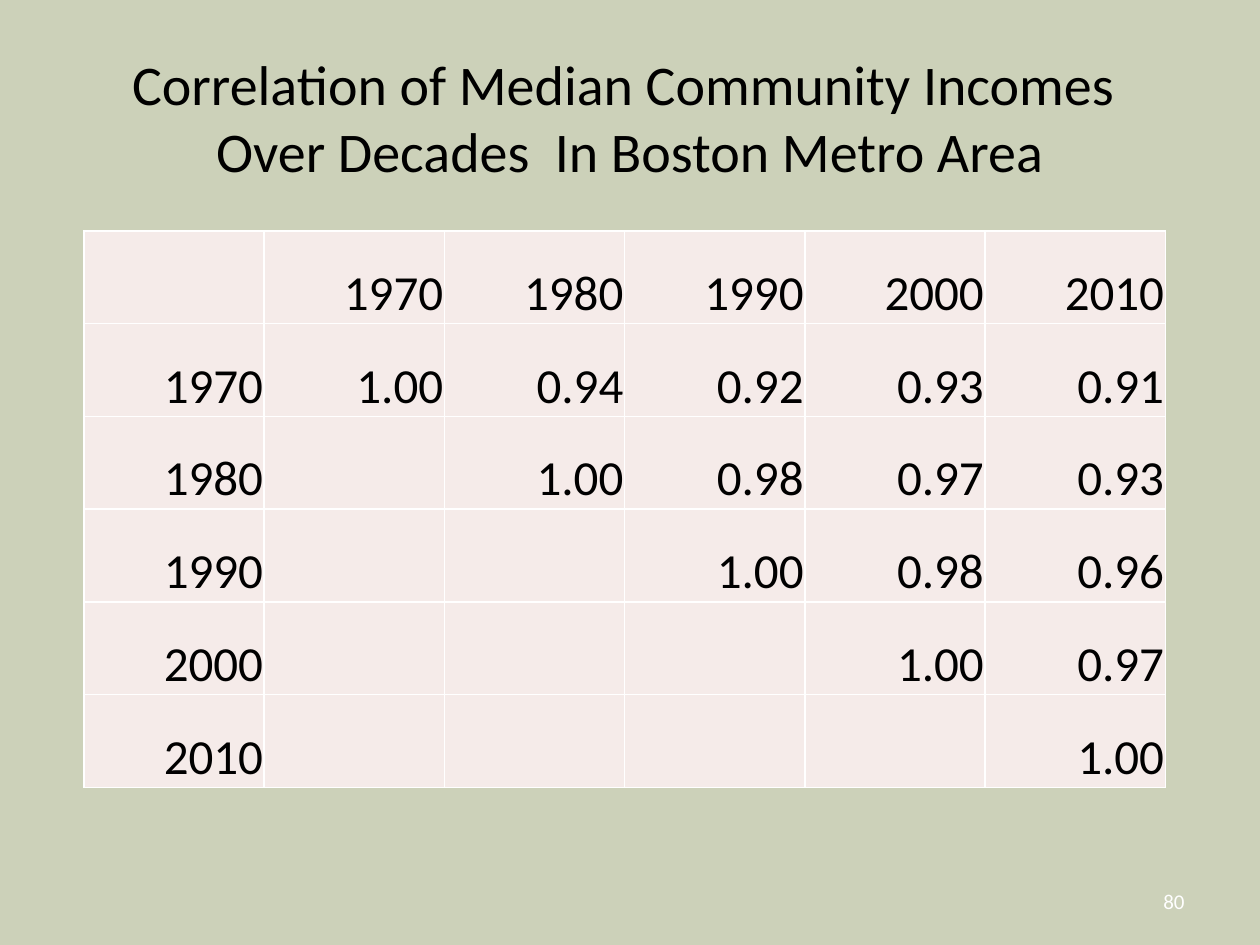
import pptx
import pptx.util
import pptx.dml.color
import pptx.enum.text
import pptx.oxml.ns
from lxml import etree

Pt = pptx.util.Pt
ALIGN = pptx.enum.text.PP_ALIGN
ANCHOR = pptx.enum.text.MSO_ANCHOR

# Content
TITLE = "Correlation of Median Community Incomes \nOver Decades  In Boston Metro Area"
PAGE_NUMBER = "80"
DECADES = ["1970", "1980", "1990", "2000", "2010"]
# Upper triangle: each row starts on the diagonal
CORRELATIONS = [
    ["1.00", "0.94", "0.92", "0.93", "0.91"],
    ["1.00", "0.98", "0.97", "0.93"],
    ["1.00", "0.98", "0.96"],
    ["1.00", "0.97"],
    ["1.00"],
]

# Style and layout
COLORS = {"background": "CCD1B9", "cell": "F5EBE9", "border": "FFFFFF",
          "text": "000000", "page": "FFFFFF"}
FONT = "Calibri"
TABLE_LEFT, TABLE_TOP = 48, 132
COLUMN_WIDTH, ROW_HEIGHT = 103, 53
CELL_INSET = 0.75


def rgb(name):
    return pptx.dml.color.RGBColor.from_string(COLORS[name])


def format_text(frame, size, color, align, anchor):
    frame.vertical_anchor = anchor
    for paragraph in frame.paragraphs:
        paragraph.alignment = align
        for run in paragraph.runs:
            run.font.name = FONT
            run.font.size = Pt(size)
            run.font.bold = False
            run.font.color.rgb = rgb(color)


def add_borders(cell):
    qn = pptx.oxml.ns.qn
    properties = cell._tc.get_or_add_tcPr()
    for side in ("lnL", "lnR", "lnT", "lnB"):
        line = etree.SubElement(properties, qn("a:" + side), w=str(Pt(1)))
        fill = etree.SubElement(line, qn("a:solidFill"))
        etree.SubElement(fill, qn("a:srgbClr"), val=COLORS["border"])


def format_cell(cell, text):
    add_borders(cell)
    cell.fill.solid()
    cell.fill.fore_color.rgb = rgb("cell")
    if text:
        cell.text_frame.text = text
        cell.margin_left = cell.margin_right = cell.margin_top = Pt(CELL_INSET)
        cell.margin_bottom = 0
        format_text(cell.text_frame, 28, "text", ALIGN.RIGHT, ANCHOR.BOTTOM)
        cell.vertical_anchor = ANCHOR.BOTTOM


def main():
    presentation = pptx.Presentation()
    presentation.slide_width, presentation.slide_height = Pt(720), Pt(540)
    slide = presentation.slides.add_slide(presentation.slide_layouts[5])
    slide.background.fill.solid()
    slide.background.fill.fore_color.rgb = rgb("background")

    # Title
    title = slide.shapes.title
    title.left, title.top, title.width, title.height = Pt(36), Pt(21.6), Pt(648), Pt(90)
    title.text_frame.paragraphs[0].text = TITLE
    format_text(title.text_frame, 32, "text", ALIGN.CENTER, ANCHOR.MIDDLE)

    # Correlation matrix, with blanks below the diagonal
    matrix = [[""] + DECADES]
    for blanks, (decade, values) in enumerate(zip(DECADES, CORRELATIONS)):
        matrix.append([decade] + [""] * blanks + values)
    size = len(matrix)
    table = slide.shapes.add_table(
        size, size, Pt(TABLE_LEFT), Pt(TABLE_TOP),
        Pt(size * COLUMN_WIDTH), Pt(size * ROW_HEIGHT)).table
    for column in table.columns:
        column.width = Pt(COLUMN_WIDTH)
    for row, texts in zip(table.rows, matrix):
        row.height = Pt(ROW_HEIGHT)
        for cell, text in zip(row.cells, texts):
            format_cell(cell, text)

    # Page number
    page = slide.shapes.add_textbox(Pt(516), Pt(500.5), Pt(168), Pt(28.75))
    page.text_frame.word_wrap = True
    page.text_frame.text = PAGE_NUMBER
    format_text(page.text_frame, 12, "page", ALIGN.RIGHT, ANCHOR.MIDDLE)

    presentation.save("out.pptx")


if __name__ == "__main__":
    main()
